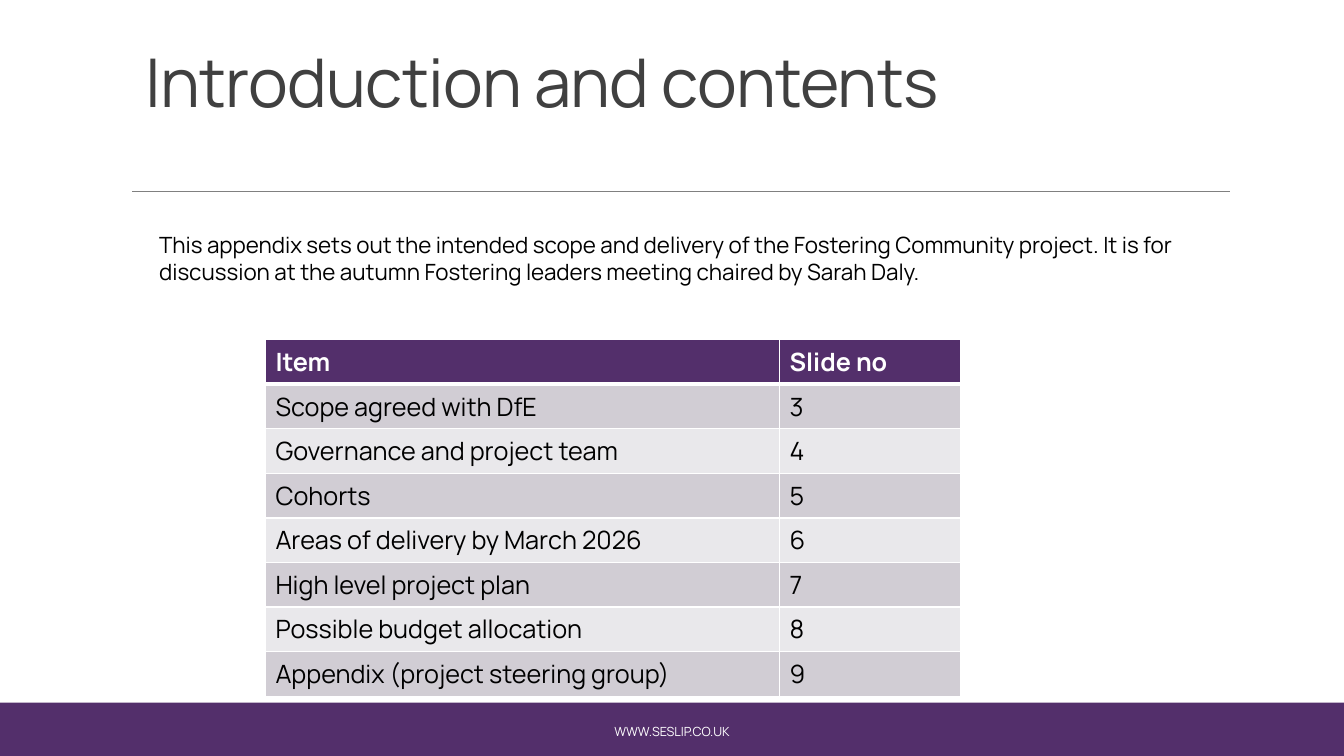
"""Build the introduction and contents slide of the fostering project appendix."""
from dataclasses import dataclass

from lxml import etree
from pptx import Presentation, util as u
from pptx.dml.color import RGBColor
from pptx.enum import shapes, text
from pptx.oxml.ns import qn

SLIDE_W, SLIDE_H = u.Inches(13.333), u.Inches(7.5)
FONT = "Manrope"
COLOURS = {
    "purple": "532F6B",
    "rule": "808080",
    "title": "404040",
    "white": "FFFFFF",
    "black": "000000",
    "odd_row": "D1CDD4",
    "even_row": "E9E8EB",
}
ITEM_W, NUMBER_W, ROW_H = 38.25, 13.5, 5.47
FIRST_SLIDE_NO = 3
TOPICS = (
    "Scope agreed with DfE",
    "Governance and project team",
    "Cohorts",
    "Areas of delivery by March 2026",
    "High level project plan",
    "Possible budget allocation",
    "Appendix (project steering group)",
)


@dataclass(frozen=True)
class Area:
    """A rectangle in percent of the slide's width and height."""
    left: float
    top: float
    width: float
    height: float

    def emu(self) -> tuple[int, int, int, int]:
        return across(self.left), down(self.top), across(self.width), down(self.height)


@dataclass(frozen=True)
class Style:
    """The look of a run of text."""
    size: float
    colour: str
    bold: bool = False


@dataclass(frozen=True)
class Caption:
    """A text box with one paragraph."""
    area: Area
    wording: str
    style: Style
    align: text.PP_ALIGN
    anchor: text.MSO_ANCHOR


TITLE_AREA = Area(10.05, -4.53, 82.5, 21.2)
CONTENTS_AREA = Area(19.75, 44.93, ITEM_W + NUMBER_W, ROW_H * (len(TOPICS) + 1))
BANDS = (Area(0, 93.33, 100, 6.67), Area(0, 92.93, 100, 0.93))
CAPTIONS = (
    Caption(Area(30.23, 94.13, 39.53, 5.33), "WWW.SESLIP.CO.UK", Style(9, "white"),
            text.PP_ALIGN.CENTER, text.MSO_ANCHOR.MIDDLE),
    Caption(Area(11.1, 29.87, 82.5, 8.53),
            "This appendix sets out the intended scope and delivery of the Fostering "
            "Community project. It is for discussion at the autumn Fostering leaders "
            "meeting chaired by Sarah Daly.",
            Style(16, "black"), text.PP_ALIGN.LEFT, text.MSO_ANCHOR.TOP),
)


def across(percent: float) -> int:
    return round(SLIDE_W * percent / 100)


def down(percent: float) -> int:
    return round(SLIDE_H * percent / 100)


def rgb(name: str) -> RGBColor:
    return RGBColor.from_string(COLOURS[name])


def write(paragraph, wording: str, style: Style):
    run = paragraph.add_run()
    run.text = wording
    run.font.name = FONT
    run.font.size = u.Pt(style.size)
    run.font.bold = style.bold
    run.font.color.rgb = rgb(style.colour)
    return run


def set_title(slide, wording: str) -> None:
    title = slide.shapes.title
    title.left, title.top, title.width, title.height = TITLE_AREA.emu()
    frame = title.text_frame
    frame.word_wrap = True
    frame.auto_size = text.MSO_AUTO_SIZE.NONE
    frame.vertical_anchor = text.MSO_ANCHOR.BOTTOM
    heading = frame.paragraphs[0]
    heading.alignment = text.PP_ALIGN.LEFT
    heading.line_spacing = 0.85
    run = write(heading, wording, Style(48, "title"))
    run.font._element.set("spc", "-50")


def add_band(slide, area: Area) -> None:
    band = slide.shapes.add_shape(shapes.MSO_SHAPE.RECTANGLE, *area.emu())
    band.shadow.inherit = False
    band.fill.solid()
    band.fill.fore_color.rgb = rgb("purple")
    band.line.fill.background()


def add_rule(slide, left: float, right: float, top: float) -> None:
    rule = slide.shapes.add_connector(shapes.MSO_CONNECTOR.STRAIGHT, across(left), down(top),
                                      across(right), down(top))
    rule.line.color.rgb = rgb("rule")
    rule.line.width = u.Pt(0.5)
    etree.SubElement(rule._element.spPr, qn("a:effectLst"))


def add_caption(slide, caption: Caption) -> None:
    frame = slide.shapes.add_textbox(*caption.area.emu()).text_frame
    frame.word_wrap = True
    frame.vertical_anchor = caption.anchor
    paragraph = frame.paragraphs[0]
    paragraph.alignment = caption.align
    write(paragraph, caption.wording, caption.style)


def add_borders(cell, row: int) -> None:
    widths = {"L": 1, "R": 1, "T": 3 if row == 1 else 1, "B": 3 if row == 0 else 1}
    for side, points in widths.items():
        border = etree.SubElement(cell._tc.get_or_add_tcPr(), qn(f"a:ln{side}"),
                                  w=str(u.Pt(points)))
        paint = etree.SubElement(border, qn("a:solidFill"))
        etree.SubElement(paint, qn("a:srgbClr"), val=COLOURS["white"])


def add_contents(slide) -> None:
    entries = [("Item", "Slide no")]
    entries += [(topic, str(number)) for number, topic in enumerate(TOPICS, FIRST_SLIDE_NO)]
    contents = slide.shapes.add_table(len(entries), 2, *CONTENTS_AREA.emu()).table
    for column, width in zip(contents.columns, (ITEM_W, NUMBER_W)):
        column.width = across(width)
    for row, entry in enumerate(entries):
        contents.rows[row].height = down(ROW_H)
        fill = "purple" if row == 0 else "odd_row" if row % 2 else "even_row"
        style = Style(18, "white", True) if row == 0 else Style(18, "black")
        for column, wording in enumerate(entry):
            cell = contents.cell(row, column)
            add_borders(cell, row)
            cell.fill.solid()
            cell.fill.fore_color.rgb = rgb(fill)
            write(cell.text_frame.paragraphs[0], wording, style)


def main() -> None:
    deck = Presentation()
    deck.slide_width, deck.slide_height = SLIDE_W, SLIDE_H
    slide = deck.slides.add_slide(deck.slide_layouts.get_by_name("Title Only"))
    set_title(slide, "Introduction and contents")
    for band in BANDS:
        add_band(slide, band)
    add_rule(slide, 9.83, 91.55, 25.33)
    add_contents(slide)
    for caption in CAPTIONS:
        add_caption(slide, caption)
    deck.save("out.pptx")


if __name__ == "__main__":
    main()
